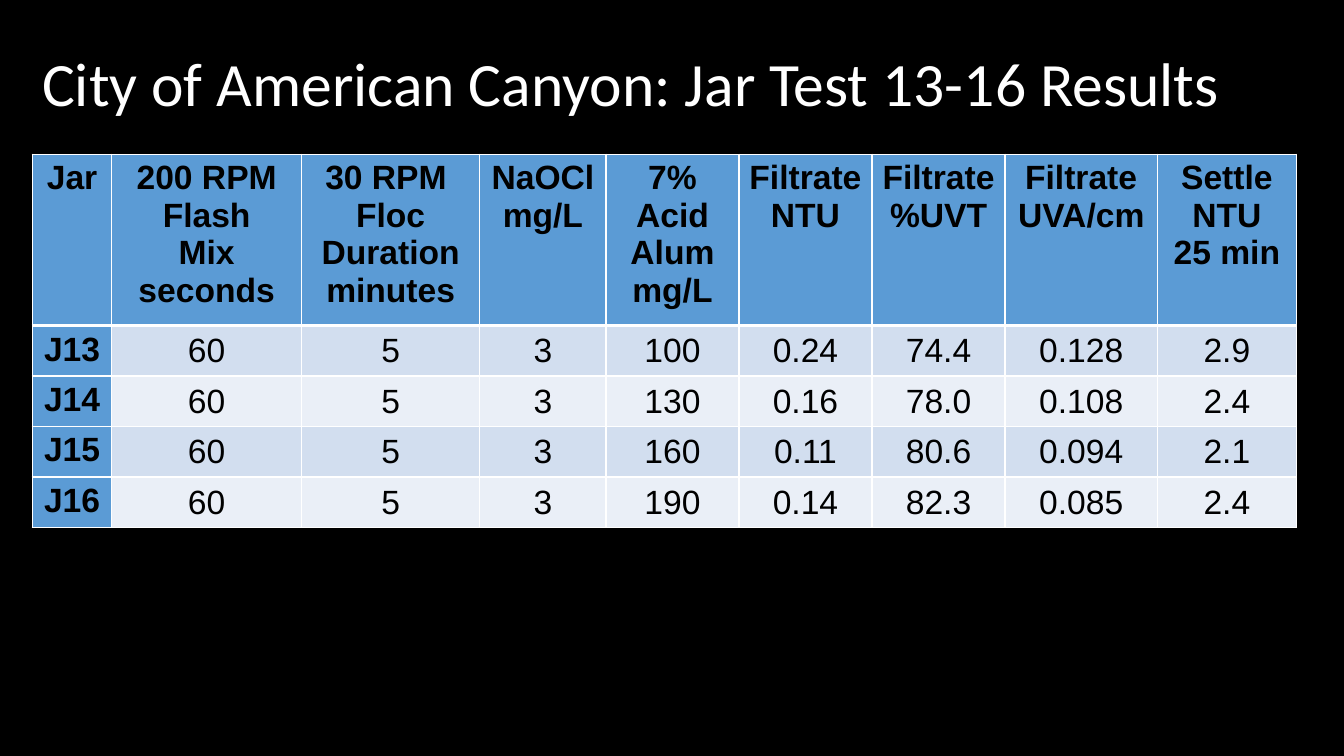
from lxml import etree
from pptx import Presentation
from pptx import util as u
from pptx.dml.color import RGBColor
from pptx.enum import text
from pptx.oxml.ns import qn

COLORS = {
    "background": "000000",
    "title": "FFFFFF",
    "body": "000000",
    "border": "FFFFFF",
    "header": "5B9BD5",
    "odd": "D2DEEF",
    "even": "EAEFF7",
}
HEADERS = [
    "Jar",
    "200 RPM\nFlash\nMix\nseconds",
    "30 RPM \nFloc\nDuration\nminutes",
    "NaOCl\nmg/L",
    "7% Acid Alum\nmg/L",
    "Filtrate\nNTU",
    "Filtrate\n%UVT",
    "Filtrate\nUVA/cm",
    "Settle\nNTU\n25 min",
]
RESULTS = [
    ["J13", "60", "5", "3", "100", "0.24", "74.4", "0.128", "2.9"],
    ["J14", "60", "5", "3", "130", "0.16", "78.0", "0.108", "2.4"],
    ["J15", "60", "5", "3", "160", "0.11", "80.6", "0.094", "2.1"],
    ["J16", "60", "5", "3", "190", "0.14", "82.3", "0.085", "2.4"],
]
COLUMN_WIDTHS = [0.79, 1.88, 1.77, 1.25, 1.32, 1.32, 1.32, 1.51, 1.38]
ROW_HEIGHTS = [1.59] + [0.47] * len(RESULTS)


def set_font(para, name, size, color, bold=False):
    para.font.name = name
    para.font.size = u.Pt(size)
    para.font.bold = bold
    para.font.color.rgb = RGBColor.from_string(COLORS[color])


def add_borders(cell, top, bottom):
    properties = cell._tc.get_or_add_tcPr()
    sides = [("a:lnL", 1), ("a:lnR", 1), ("a:lnT", top), ("a:lnB", bottom)]
    for position, (side, points) in enumerate(sides):
        line = etree.Element(qn(side), w=str(u.Pt(points)))
        fill = etree.SubElement(line, qn("a:solidFill"))
        etree.SubElement(fill, qn("a:srgbClr"), val=COLORS["border"])
        properties.insert(position, line)


deck = Presentation()
deck.slide_width = u.Inches(13.33)
deck.slide_height = u.Inches(7.5)
page = deck.slides.add_slide(deck.slide_layouts[6])
page.background.fill.solid()
page.background.fill.fore_color.rgb = RGBColor.from_string(COLORS["background"])

title = page.shapes.add_textbox(u.Inches(0.32), u.Inches(0.13), u.Inches(12.1), u.Inches(1.45))
title.text_frame.word_wrap = True
title.text_frame.vertical_anchor = text.MSO_ANCHOR.MIDDLE
title_para = title.text_frame.paragraphs[0]
title_para.text = "City of American Canyon: Jar Test 13-16 Results"
title_para.line_spacing = 0.9
set_font(title_para, "Calibri", 44, "title")

table = page.shapes.add_table(
    len(ROW_HEIGHTS), len(COLUMN_WIDTHS), u.Inches(0.32), u.Inches(1.53),
    u.Inches(sum(COLUMN_WIDTHS)), u.Inches(sum(ROW_HEIGHTS)),
).table
table.first_col = True
for column, width in zip(table.columns, COLUMN_WIDTHS):
    column.width = u.Inches(width)
for row, height in zip(table.rows, ROW_HEIGHTS):
    row.height = u.Inches(height)

for row_index, values in enumerate([HEADERS] + RESULTS):
    for column_index, value in enumerate(values):
        cell = table.cell(row_index, column_index)
        is_heading = row_index == 0 or column_index == 0
        band = "odd" if row_index % 2 else "even"
        cell.text = value
        cell.fill.solid()
        cell.fill.fore_color.rgb = RGBColor.from_string(COLORS["header" if is_heading else band])
        if not is_heading:
            cell.vertical_anchor = text.MSO_ANCHOR.MIDDLE
            cell.margin_left = cell.margin_right = cell.margin_top = u.Inches(0.01)
            cell.margin_bottom = 0
        for para in cell.text_frame.paragraphs:
            para.alignment = text.PP_ALIGN.CENTER
            set_font(para, "Arial", 24, "body", is_heading)
        add_borders(cell, 3 if row_index == 1 else 1, 3 if row_index == 0 else 1)

deck.save("out.pptx")
